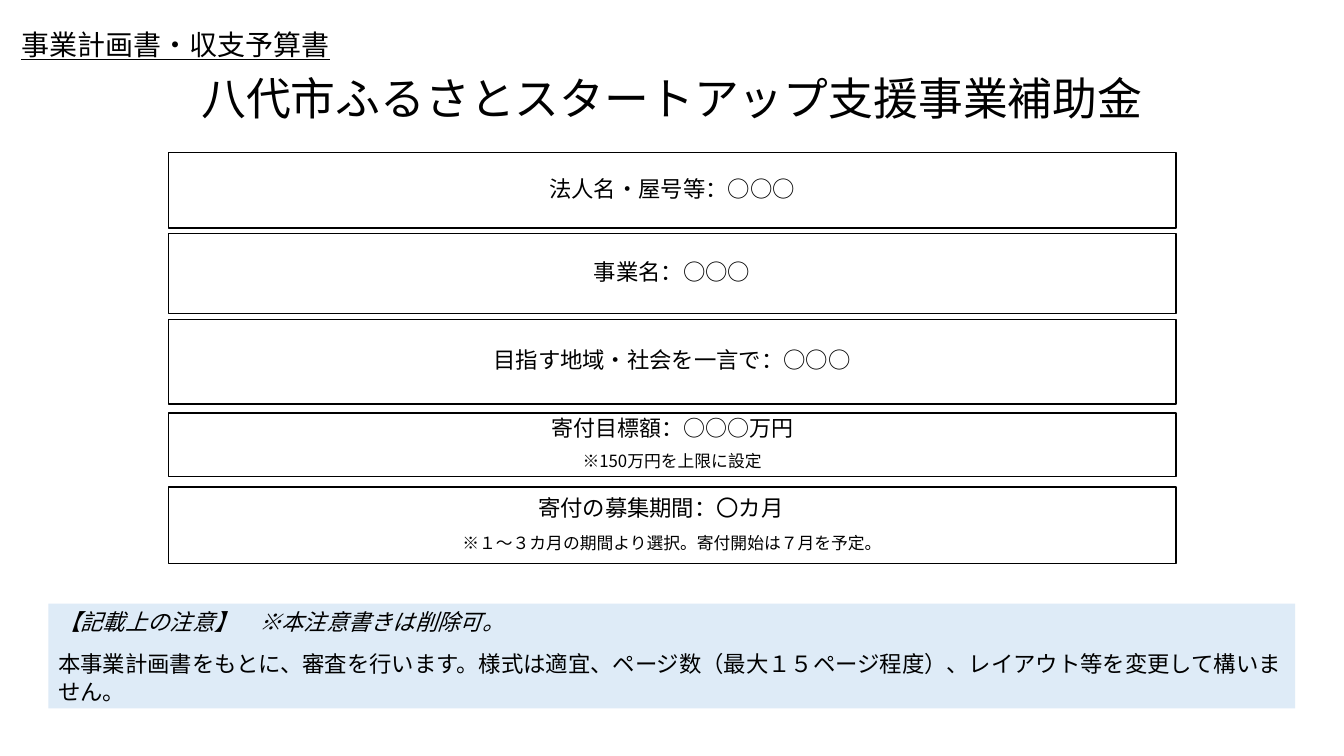
import pptx
import pptx.util
import pptx.dml.color
import pptx.enum.shapes
import pptx.enum.text
from lxml import etree
from pptx.util import Cm, Pt

FONT = "Noto Sans CJK JP"
COLORS = {"text": "000000", "line": "000000", "row": "FFFFFF", "note": "DEEBF7"}
ALIGN = pptx.enum.text.PP_ALIGN
ANCHOR = pptx.enum.text.MSO_ANCHOR
ROWS = [
    (3.84, 1.91, 0.9, [("法人名・屋号等：○○○", 16)]),
    (5.89, 2.01, 0.9, [("事業名：○○○", 16)]),
    (8.05, 2.13, 0.9, [("目指す地域・社会を一言で：○○○", 16)]),
    (10.41, 1.6, 0.8, [("寄付目標額：○○○万円", 15.7), ("※150万円を上限に設定", 12)]),
    (12.27, 1.93, 0.9, [("寄付の募集期間：〇カ月　", 16),
                        ("※１～３カ月の期間より選択。寄付開始は７月を予定。", 12)]),
]
NOTES = [
    ("【記載上の注意】　※本注意書きは削除可。", 16),
    ("本事業計画書をもとに、審査を行います。様式は適宜、ページ数（最大１５ページ程度）、"
     "レイアウト等を変更して構いません。", 16),
]


def rgb(name):
    return pptx.dml.color.RGBColor.from_string(COLORS[name])


def place(sp, box):
    sp.left, sp.top, sp.width, sp.height = [Cm(v) for v in box]


def write(sp, lines, align, anchor, spacing=1.0, before=0):
    tf = sp.text_frame
    tf.word_wrap = True
    tf.auto_size = pptx.enum.text.MSO_AUTO_SIZE.NONE
    tf.vertical_anchor = anchor
    for i, (text, size) in enumerate(lines):
        p = tf.add_paragraph() if i else tf.paragraphs[0]
        p.add_run().text = text
        p.alignment = align
        p.line_spacing = spacing
        p.space_before = Pt(before)
        p.font.size = Pt(size)
        p.font.name = FONT
        p.font.color.rgb = rgb("text")
        latin = p.font._element.find(pptx.oxml.ns.qn("a:latin"))
        ea = etree.Element(pptx.oxml.ns.qn("a:ea"), typeface=FONT)
        latin.addnext(ea)
    return tf


def add_rect(s, box):
    sp = s.shapes.add_shape(pptx.enum.shapes.MSO_SHAPE.RECTANGLE, 0, 0, 0, 0)
    sp.shadow.inherit = False
    place(sp, box)
    return sp


def add_heading(s, box):
    sp = s.shapes.add_textbox(*[Cm(v) for v in box])
    tf = write(sp, [("事業計画書・収支予算書", 20)], ALIGN.RIGHT, ANCHOR.TOP)
    tf.paragraphs[0].font.underline = True


def add_title(s, box):
    sp = s.shapes.title
    place(sp, box)
    write(sp, [("八代市ふるさとスタートアップ支援事業補助金", 32)],
          ALIGN.CENTER, ANCHOR.BOTTOM, 0.9)


def add_rows(s, left, width):
    for i, (top, height, spacing, lines) in enumerate(ROWS):
        box = (left, top, width, height)
        if i:
            sp = add_rect(s, box)
        else:
            sp = s.placeholders[1]
            place(sp, box)
        sp.fill.solid()
        sp.fill.fore_color.rgb = rgb("row")
        sp.line.color.rgb = rgb("line")
        sp.line.width = Pt(1)
        write(sp, lines, ALIGN.CENTER, ANCHOR.MIDDLE, spacing, 10)


def add_notice(s, box):
    sp = add_rect(s, box)
    sp.fill.solid()
    sp.fill.fore_color.rgb = rgb("note")
    sp.line.fill.background()
    tf = write(sp, NOTES, ALIGN.LEFT, ANCHOR.MIDDLE, Pt(20), 10)
    tf.paragraphs[0].font.italic = True


def main():
    prs = pptx.Presentation()
    prs.slide_width, prs.slide_height = Cm(33.87), Cm(19.05)
    s = prs.slides.add_slide(prs.slide_layouts[0])
    add_title(s, (4.24, 1.32, 25.4, 1.96))
    add_rows(s, 4.24, 25.4)
    add_notice(s, (1.22, 15.21, 31.42, 2.64))
    add_heading(s, (0.2, 0.56, 8.36, 1.12))
    prs.save("out.pptx")


if __name__ == "__main__":
    main()
